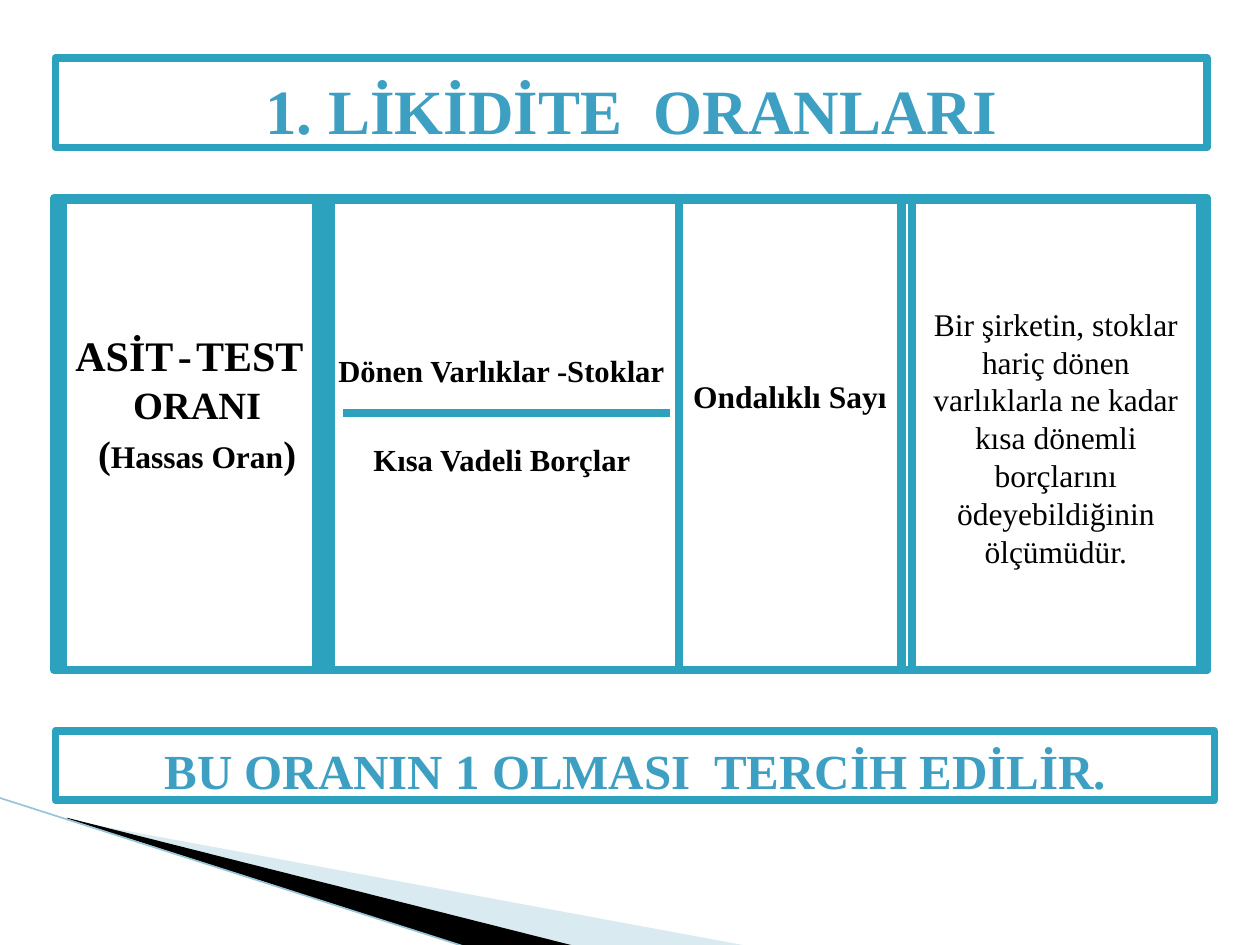
from dataclasses import dataclass
from typing import Optional

from lxml import etree
from pptx import Presentation
from pptx.dml.color import RGBColor
from pptx.enum.shapes import MSO_CONNECTOR, MSO_SHAPE
from pptx.enum.text import MSO_ANCHOR, PP_ALIGN
from pptx.oxml.ns import qn
from pptx.util import Inches, Pt

RECT = MSO_SHAPE.RECTANGLE
STRAIGHT = MSO_CONNECTOR.STRAIGHT
TOP = MSO_ANCHOR.TOP
LEFT, CENTER = PP_ALIGN.LEFT, PP_ALIGN.CENTER

TEAL = RGBColor(0x2D, 0xA2, 0xBF)
HEADING = RGBColor(0x3D, 0xA0, 0xC2)
PALE = RGBColor(0xA0, 0xCB, 0xDC)
EDGE = RGBColor(0x97, 0xC5, 0xD8)
BLACK = RGBColor(0, 0, 0)
WHITE = RGBColor(0xFF, 0xFF, 0xFF)
FONT = "Times New Roman"
BORDER = 4.33
ROW_TOP, ROW_HEIGHT = 1.59, 3.73


@dataclass
class Line:
    """A paragraph: (text, size) runs."""
    runs: list[tuple[str, float]]
    align: PP_ALIGN = CENTER
    bold: bool = True
    color: RGBColor = BLACK
    spacing: Optional[float] = None


@dataclass
class Box:
    left: float
    width: float
    top: float = ROW_TOP
    height: float = ROW_HEIGHT
    lines: tuple[Line, ...] = ()
    inset: float = 0.05
    fill: Optional[RGBColor] = None


def write_lines(tf, lines: tuple[Line, ...], inset: float) -> None:
    tf.word_wrap = True
    tf.vertical_anchor = TOP
    tf.margin_top, tf.margin_bottom = Inches(inset), 0
    for i, line in enumerate(lines):
        p = tf.paragraphs[0] if i == 0 else tf.add_paragraph()
        p.alignment = line.align
        if line.spacing:
            p.line_spacing = Pt(line.spacing)
        for text, size in line.runs:
            r = p.add_run()
            r.text = text
            r.font.name = FONT
            r.font.size = Pt(size)
            r.font.bold = line.bold
            r.font.color.rgb = line.color


def add_box(shapes, box: Box) -> None:
    sp = shapes.add_shape(RECT, Inches(box.left), Inches(box.top),
                          Inches(box.width), Inches(box.height))
    sp.shadow.inherit = False
    sp.line.color.rgb = TEAL
    sp.line.width = Pt(BORDER)
    if box.fill is None:
        sp.fill.background()
    else:
        sp.fill.solid()
        sp.fill.fore_color.rgb = box.fill
    if box.lines:
        write_lines(sp.text_frame, box.lines, box.inset)


def add_line(shapes, x1: float, y1: float, x2: float, y2: float,
             color: RGBColor, width: float) -> None:
    cx = shapes.add_connector(STRAIGHT, Inches(x1), Inches(y1), Inches(x2), Inches(y2))
    cx.line.color.rgb = color
    cx.line.width = Pt(width)
    etree.SubElement(cx._element.spPr, qn("a:effectLst"))


def add_wedge(shapes, points: list[tuple[float, float]], color: RGBColor,
              opacity: int = 100) -> None:
    start, *rest = [(Inches(x), Inches(y)) for x, y in points]
    builder = shapes.build_freeform(*start)
    builder.add_line_segments(rest, close=True)
    sp = builder.convert_to_shape()
    sp.shadow.inherit = False
    sp.line.fill.background()
    sp.fill.solid()
    sp.fill.fore_color.rgb = color
    if opacity < 100:
        clr = sp._element.spPr.find(".//" + qn("a:srgbClr"))
        etree.SubElement(clr, qn("a:alpha"), val=str(opacity * 1000))


RATIO_NAME = (
    Line([("ASİT", 24), (" ", 10), ("-", 24), (" ", 10), ("TEST", 24)], LEFT, spacing=27.5),
    Line([("ORANI", 22)], spacing=27.5),
    Line([("(", 22), ("Hassas Oran", 18), (")", 22)], spacing=27.5),
)
MEANING = ("Bir şirketin, stoklar hariç dönen varlıklarla ne kadar kısa dönemli "
           "borçlarını ödeyebildiğinin ölçümüdür.")

# Table row: columns, their outer rules and the frame, back to front
ROW = [
    Box(0.5, 2.13, lines=RATIO_NAME, inset=1.04),
    Box(0.44, 2.07),
    Box(2.57, 2.82, lines=(Line([("Dönen Varlıklar -Stoklar", 17.5)]),), inset=1.2),
    Box(5.39, 1.76, lines=(Line([("Ondalıklı Sayı", 18)]),), inset=1.4),
    Box(7.24, 2.28, lines=(Line([(MEANING, 18)], bold=False, spacing=21.6),), inset=0.83),
    Box(7.16, 2.42),
    Box(0.43, 9.15, 1.57, 3.75),
]
BANNERS = [
    Box(0.44, 9.14, 0.46, 0.71,
        (Line([("1. LİKİDİTE  ORANLARI", 36)], color=HEADING),), 0.11, WHITE),
    Box(0.44, 9.2, 5.8, 0.55,
        (Line([("BU ORANIN 1 OLMASI  TERCİH EDİLİR.", 28)], color=HEADING),), 0.08, WHITE),
]


def main() -> None:
    prs = Presentation()
    prs.slide_width, prs.slide_height = Inches(10), Inches(7.5)
    shapes = prs.slides.add_slide(prs.slide_layouts[6]).shapes

    # Corner decoration
    add_wedge(shapes, [(0.55, 6.51), (5.95, 7.51), (4.56, 7.51), (0.55, 6.5)], PALE, 40)
    add_wedge(shapes, [(0.53, 6.49), (4.57, 7.51), (3.72, 7.52), (0.54, 6.5)], BLACK)
    add_line(shapes, -0.01, 6.33, 3.71, 7.52, EDGE, 0.95)

    # Row with the fraction bar, then the banners
    for box in ROW:
        add_box(shapes, box)
    add_line(shapes, 2.72, 3.28, 5.32, 3.28, TEAL, BORDER)
    for box in BANNERS:
        add_box(shapes, box)

    # Denominator
    tb = shapes.add_textbox(Inches(2.58), Inches(3.42), Inches(2.81), Inches(0.4))
    write_lines(tb.text_frame, (Line([("Kısa Vadeli Borçlar", 17.5)]),), 0.08)

    prs.save("out.pptx")


if __name__ == "__main__":
    main()
